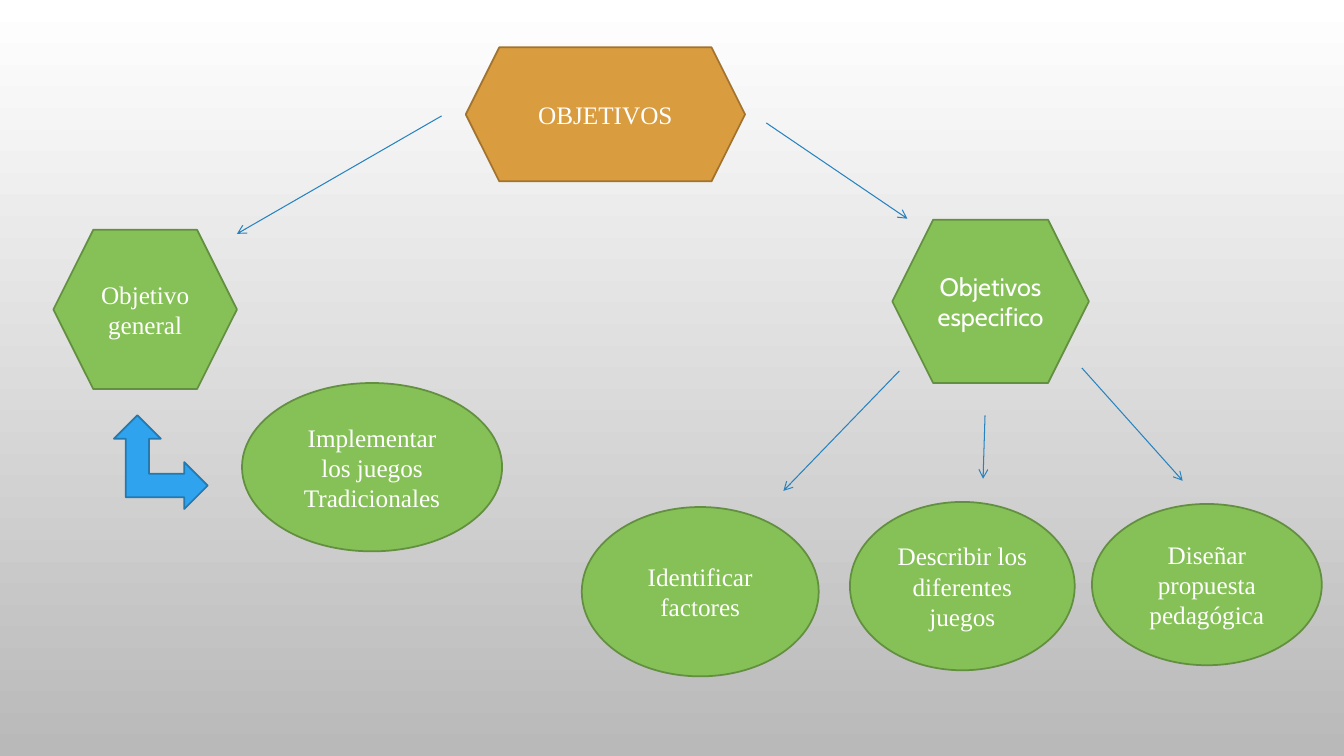
from dataclasses import dataclass

from lxml.etree import SubElement
from pptx import Presentation
from pptx.dml.color import RGBColor
from pptx.enum.shapes import MSO_CONNECTOR, MSO_SHAPE
from pptx.enum.text import MSO_ANCHOR, PP_ALIGN
from pptx.oxml.ns import qn
from pptx.shapes.autoshape import Shape
from pptx.slide import Slide
from pptx.util import Inches, Pt

COLORS = {
    "background_top": "FFFFFF",
    "background_bottom": "B9B9B9",
    "orange": "D99C3F",
    "orange_border": "A1732F",
    "green": "86C157",
    "green_border": "638F40",
    "blue": "2FA3EE",
    "blue_border": "2379B0",
    "link": "2683BF",
    "text": "FFFFFF",
}


@dataclass(frozen=True)
class Node:
    geometry: MSO_SHAPE
    left: float
    top: float
    width: float
    height: float
    text: str = ""
    color: str = "green"
    font: str = "Times New Roman"
    rotation: float = 0


@dataclass(frozen=True)
class Link:
    start: tuple[float, float]
    end: tuple[float, float]


NODES = [
    Node(MSO_SHAPE.HEXAGON, 4.62, 0.47, 2.77, 1.33, "OBJETIVOS", color="orange"),
    Node(MSO_SHAPE.HEXAGON, 0.53, 2.28, 1.82, 1.58, "Objetivo general"),
    Node(MSO_SHAPE.HEXAGON, 8.85, 2.18, 1.95, 1.62, "Objetivos especifico", font="Cabin"),
    Node(MSO_SHAPE.LEFT_UP_ARROW, 1.13, 4.12, 0.93, 0.93, color="blue", rotation=90),
    Node(MSO_SHAPE.OVAL, 2.4, 3.8, 2.58, 1.67, "Implementar los juegos Tradicionales"),
    Node(MSO_SHAPE.OVAL, 5.77, 5.03, 2.35, 1.68, "Identificar factores"),
    Node(MSO_SHAPE.OVAL, 8.43, 4.98, 2.23, 1.67, "Describir los diferentes juegos"),
    Node(MSO_SHAPE.OVAL, 10.83, 5, 2.28, 1.6, "Diseñar propuesta pedagógica"),
]

LINKS = [
    Link((4.38, 1.15), (2.35, 2.32)),
    Link((7.6, 1.22), (9, 2.17)),
    Link((8.92, 3.68), (7.77, 4.87)),
    Link((9.77, 4.12), (9.75, 4.75)),
    Link((10.73, 3.65), (11.73, 4.77)),
]


def rgb(name: str) -> RGBColor:
    return RGBColor.from_string(COLORS[name])


def paint_background(slide: Slide) -> None:
    fill = slide.background.fill
    fill.gradient()
    fill.gradient_angle = 270
    for stop, position, name in zip(
        fill.gradient_stops, (0, 1), ("background_top", "background_bottom")
    ):
        stop.position = position
        stop.color.rgb = rgb(name)


def write_label(shape: Shape, node: Node) -> None:
    frame = shape.text_frame
    frame.text = node.text
    frame.word_wrap = True
    frame.vertical_anchor = MSO_ANCHOR.MIDDLE
    label = frame.paragraphs[0]
    label.alignment = PP_ALIGN.CENTER
    for run in label.runs:
        run.font.name = node.font
        run.font.size = Pt(18)
        run.font.color.rgb = rgb("text")


def draw_node(slide: Slide, node: Node) -> None:
    shape = slide.shapes.add_shape(
        node.geometry,
        Inches(node.left),
        Inches(node.top),
        Inches(node.width),
        Inches(node.height),
    )
    shape.rotation = node.rotation
    shape.shadow.inherit = False
    shape.fill.solid()
    shape.fill.fore_color.rgb = rgb(node.color)
    shape.line.color.rgb = rgb(f"{node.color}_border")
    shape.line.width = Pt(1.25)
    if node.text:
        write_label(shape, node)


def draw_link(slide: Slide, link: Link) -> None:
    connector = slide.shapes.add_connector(
        MSO_CONNECTOR.STRAIGHT,
        *(Inches(value) for value in link.start + link.end),
    )
    connector.line.color.rgb = rgb("link")
    connector.line.width = Pt(0.75)
    SubElement(connector.line._get_or_add_ln(), qn("a:tailEnd"), type="arrow")
    SubElement(connector._element.spPr, qn("a:effectLst"))


def main() -> None:
    presentation = Presentation()
    presentation.slide_width = Inches(13.33)
    presentation.slide_height = Inches(7.5)
    slide = presentation.slides.add_slide(presentation.slide_layouts[6])
    paint_background(slide)
    for node in NODES:
        draw_node(slide, node)
    for link in LINKS:
        draw_link(slide, link)
    presentation.save("out.pptx")


if __name__ == "__main__":
    main()
